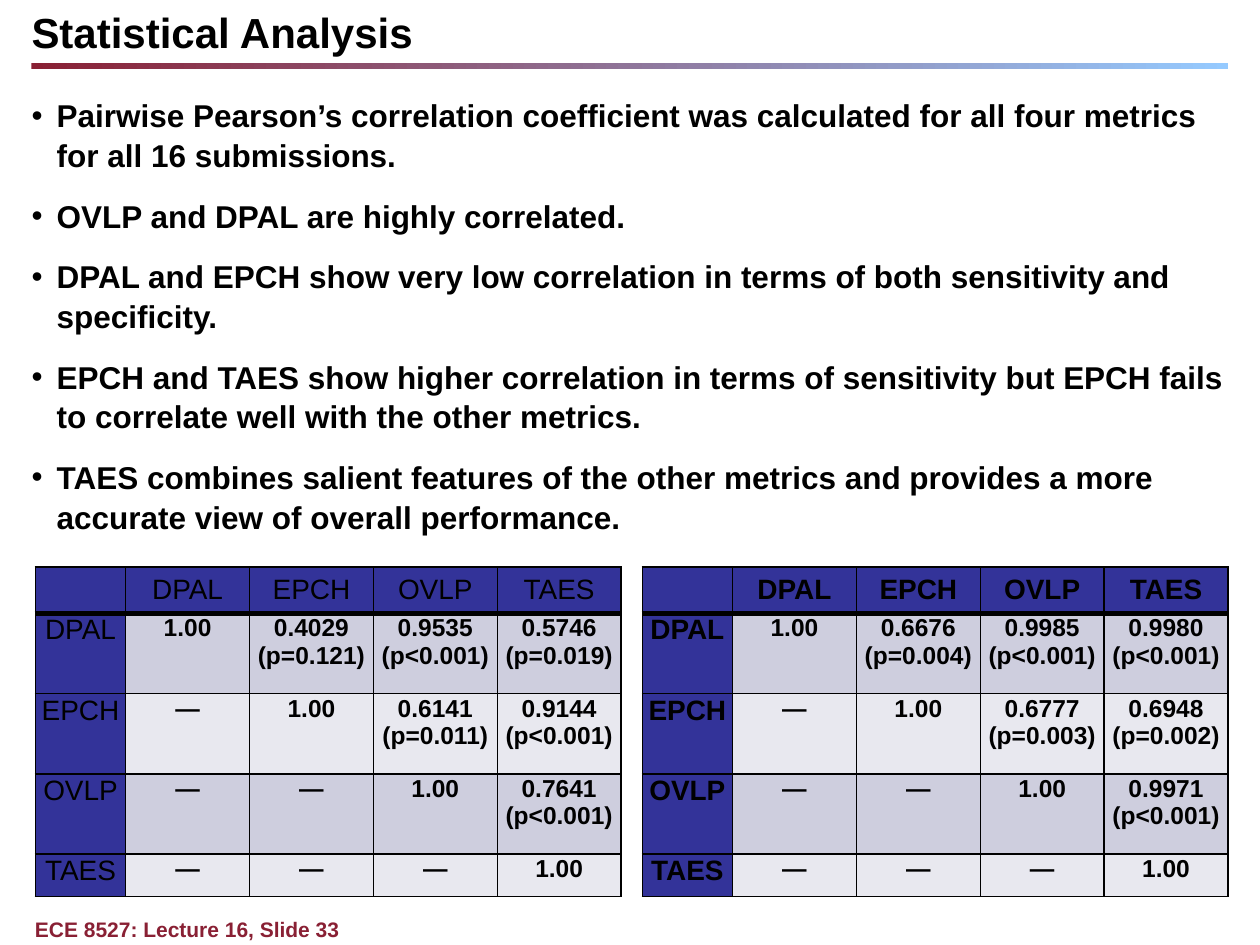
from lxml import etree
from pptx import Presentation
from pptx import util as u
from pptx.dml.color import RGBColor
from pptx.enum import shapes, text
from pptx.oxml.ns import qn

TITLE = "Statistical Analysis"
FOOT = "ECE 8527: Lecture 16, Slide 33"
POINTS = [
    "Pairwise Pearson’s correlation coefficient was calculated for all four metrics for all 16 submissions.",
    "OVLP and DPAL are highly correlated.",
    "DPAL and EPCH show very low correlation in terms of both sensitivity and specificity.",
    "EPCH and TAES show higher correlation in terms of sensitivity but EPCH fails to correlate well with the other metrics.",
    "TAES combines salient features of the other metrics and provides a more accurate view of overall performance.",
]
NAMES = ["DPAL", "EPCH", "OVLP", "TAES"]
TABLES = [
    {"left": 20.2, "bold": False, "gap": "\v", "pairs": [
        ["0.4029 (p=0.121)", "0.9535 (p<0.001)", "0.5746 (p=0.019)"],
        ["0.6141 (p=0.011)", "0.9144 (p<0.001)"],
        ["0.7641 (p<0.001)"],
        []]},
    {"left": 367, "bold": True, "gap": "\n", "pairs": [
        ["0.6676 (p=0.004)", "0.9985 (p<0.001)", "0.9980 (p<0.001)"],
        ["0.6777 (p=0.003)", "0.6948 (p=0.002)"],
        ["0.9971 (p<0.001)"],
        []]},
]
COLS = [51.6] + [70.8] * 4
ROWS = [26.6] + [45.8] * 3 + [24.5]
TOP = 324

BLACK = RGBColor(0, 0, 0)
RED = RGBColor(0x89, 0x20, 0x34)
SKY = RGBColor(0x95, 0xCA, 0xFF)
NAVY = RGBColor(0x33, 0x33, 0x99)
BANDS = [RGBColor(0xE8, 0xE8, 0xEF), RGBColor(0xCE, 0xCE, 0xDE)]

LEFT = text.PP_ALIGN.LEFT
MID = text.PP_ALIGN.CENTER
HIGH = text.MSO_ANCHOR.TOP
HALF = text.MSO_ANCHOR.MIDDLE
PLAIN = {"margin_left": 0, "margin_right": 0, "margin_top": 0, "margin_bottom": 0,
         "word_wrap": True, "auto_size": text.MSO_AUTO_SIZE.NONE}
INSET = {"margin_left": u.Pt(1.4), "margin_right": u.Pt(1.4),
         "margin_top": u.Pt(0.7), "margin_bottom": u.Pt(0.7)}


def apply(item, form):
    for key, value in form.items():
        setattr(item, key, value)


def style(para, size, bold=True, color=BLACK, **form):
    apply(para, form)
    apply(para.font, {"name": "Arial", "size": u.Pt(size), "bold": bold})
    para.font.color.rgb = color


def place(shape, left, top, width, height):
    apply(shape, {"left": u.Pt(left), "top": u.Pt(top),
                  "width": u.Pt(width), "height": u.Pt(height)})


def bullet(para):
    props = para._p.get_or_add_pPr()
    props.set("marL", str(u.Pt(14.4)))
    props.set("indent", str(u.Pt(-14.4)))
    etree.SubElement(props, qn("a:buChar")).set("char", "•")


def border(cell, head):
    props = cell._tc.get_or_add_tcPr()
    for side in "LRTB":
        width = 3 if head and side == "B" else 1
        line = etree.SubElement(props, qn("a:ln" + side), w=str(u.Pt(width)))
        fill = etree.SubElement(line, qn("a:solidFill"))
        etree.SubElement(fill, qn("a:srgbClr"), val=str(BLACK))


def matrix(data):
    rows = [[""] + NAMES]
    for i, (name, pairs) in enumerate(zip(NAMES, data["pairs"])):
        rows.append([name] + ["—"] * i + ["1.00"]
                    + [pair.replace(" ", data["gap"]) for pair in pairs])
    return rows


def draw(slide, data):
    frame = slide.shapes.add_table(len(ROWS), len(COLS), u.Pt(data["left"]), u.Pt(TOP),
                                   u.Pt(sum(COLS)), u.Pt(sum(ROWS)))
    grid = frame.table
    apply(grid, {"first_row": False, "horz_banding": False})
    for col, width in zip(grid.columns, COLS):
        col.width = u.Pt(width)
    for row, height in zip(grid.rows, ROWS):
        row.height = u.Pt(height)
    for i, row in enumerate(matrix(data)):
        for j, words in enumerate(row):
            cell = grid.cell(i, j)
            label = i == 0 or j == 0
            cell.text = words
            apply(cell, {**INSET, "vertical_anchor": HIGH if i else HALF})
            border(cell, i == 0)
            cell.fill.solid()
            cell.fill.fore_color.rgb = NAVY if label else BANDS[i % 2]
            for para in cell.text_frame.paragraphs:
                style(para, 16 if label else 14, data["bold"] or not label, alignment=MID)


def main():
    deck = Presentation()
    apply(deck, {"slide_width": u.Pt(720), "slide_height": u.Pt(540)})
    slide = deck.slides.add_slide(deck.slide_layouts[1])

    title = slide.shapes.title
    place(title, 18, 0, 684, 36)
    title.text = TITLE
    apply(title.text_frame, {**PLAIN, "vertical_anchor": HALF})
    style(title.text_frame.paragraphs[0], 24, alignment=LEFT)

    body = slide.placeholders[1]
    place(body, 18, 54, 683.5, 252)
    body.text = "\n".join(POINTS)
    apply(body.text_frame, {**PLAIN, "vertical_anchor": HIGH})
    for para in body.text_frame.paragraphs:
        bullet(para)
        style(para, 18, alignment=LEFT, line_spacing=1.05,
              space_before=u.Pt(0), space_after=u.Pt(12))

    rule = slide.shapes.add_shape(shapes.MSO_SHAPE.RECTANGLE, 0, 0, 0, 0)
    place(rule, 18, 36, 684, 3.6)
    rule.shadow.inherit = False
    rule.line.fill.background()
    rule.fill.gradient()
    rule.fill.gradient_angle = 0
    for stop, color in zip(rule.fill.gradient_stops, (RED, SKY)):
        stop.color.rgb = color

    foot = slide.shapes.add_textbox(u.Pt(20), u.Pt(523.5), u.Pt(642), u.Pt(14.4))
    foot.text_frame.text = FOOT
    apply(foot.text_frame, PLAIN)
    style(foot.text_frame.paragraphs[0], 12, color=RED)

    for data in TABLES:
        draw(slide, data)
    deck.save("out.pptx")


if __name__ == "__main__":
    main()
